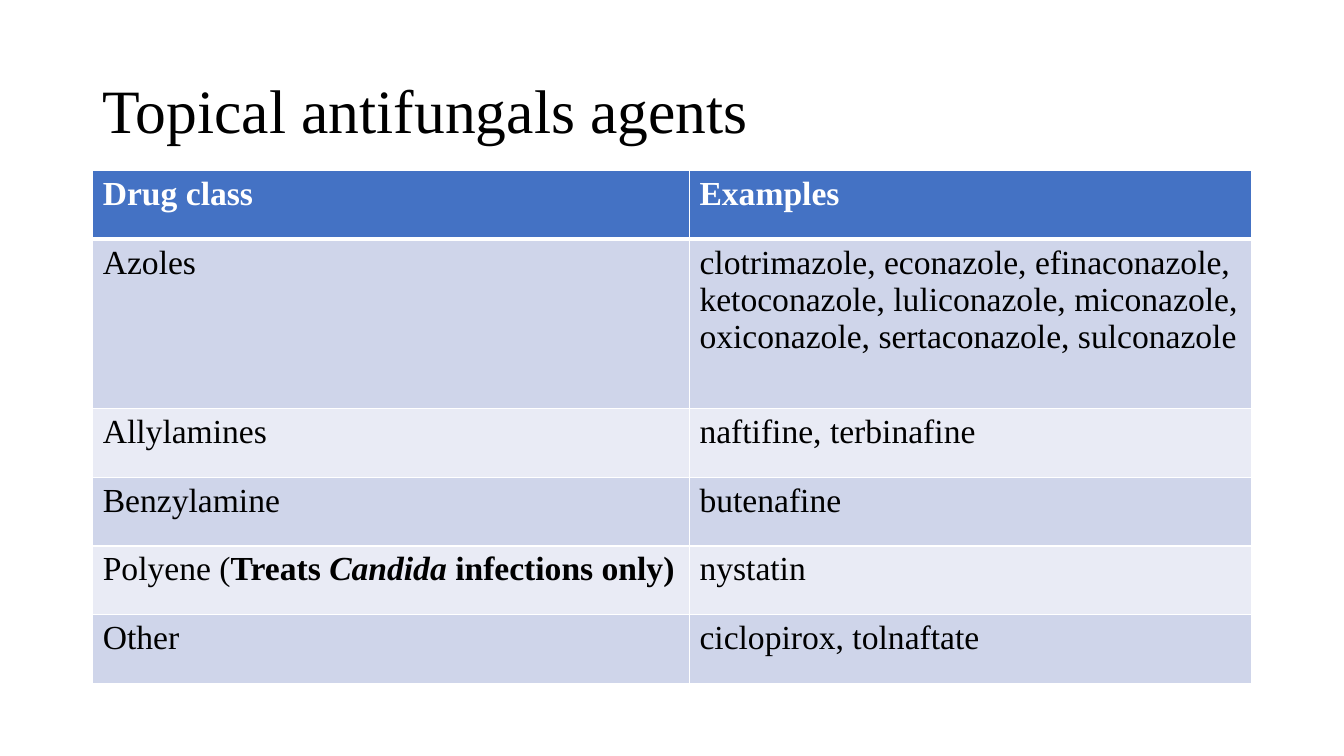
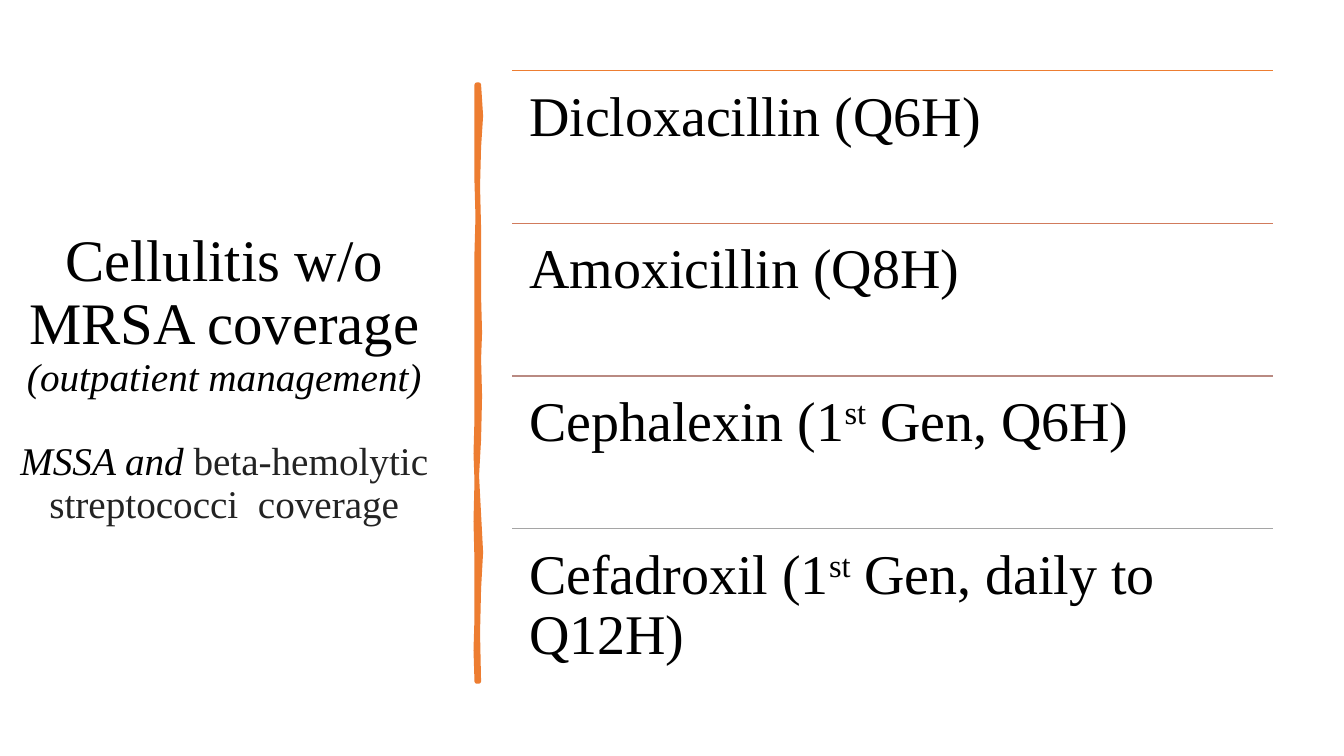
from pptx import Presentation, util as u
from pptx.dml.color import RGBColor
from pptx.enum import shapes, text
from pptx.oxml.ns import qn
from lxml import etree

FONT = "Times New Roman"
BLACK, WHITE, ORANGE = "000000", "FFFFFF", "ED7D31"
HEAD, DARK, LIGHT = "4472C4", "CFD5EA", "E9EBF5"
I = u.Inches


def color(code):
    return RGBColor.from_string(code)


def write(para, runs, size, spacing=0.9):
    """Add runs given as (words, style); style may hold b, i, sup and c."""
    para.line_spacing = spacing
    for words, style in runs:
        run = para.add_run()
        run.text = words
        font = run.font
        font.name, font.size = FONT, u.Pt(size)
        font.bold, font.italic = style.get("b", False), style.get("i", False)
        font.color.rgb = color(style.get("c", BLACK))
        if "sup" in style:
            run._r.get_or_add_rPr().set("baseline", "30000")


prs = Presentation()
prs.slide_width, prs.slide_height = I(40 / 3), I(7.5)
blank = prs.slide_layouts[6]

# Slide 1: table of drug classes
slide = prs.slides.add_slide(blank)
frame = slide.shapes.add_textbox(I(0.92), I(0.4), I(11.5), I(1.45)).text_frame
frame.word_wrap = True
frame.vertical_anchor = text.MSO_ANCHOR.MIDDLE
write(frame.paragraphs[0], [("Topical antifungals agents", {})], 44)

bold = {"b": True}
rows = [
    ([("Drug class", {"b": True, "c": WHITE})], [("Examples", {"b": True, "c": WHITE})]),
    ([("Azoles", {})],
     [("clotrimazole, econazole, efinaconazole, ketoconazole, luliconazole, "
       "miconazole, oxiconazole, sertaconazole, sulconazole", {})]),
    ([("Allylamines", {})], [("naftifine, terbinafine", {})]),
    ([("Benzylamine", {})], [("butenafine", {})]),
    ([("Polyene (", {}), ("Treats ", bold), ("Candida", {"b": True, "i": True}),
      (" infections only)", bold)], [("nystatin", {})]),
    ([("Other", {})], [("ciclopirox, tolnaftate", {})]),
]
full, tall = 5.09, 1.68
table = slide.shapes.add_table(len(rows), 2, I(0.92), I(1.69), I(11.5), I(full)).table
for col, wide in zip(table.columns, (5.92, 5.58)):
    col.width = I(wide)
for r, row in enumerate(rows):
    table.rows[r].height = I(tall if r == 1 else (full - tall) / (len(rows) - 1))
    for c, runs in enumerate(row):
        cell = table.cell(r, c)
        cell.fill.solid()
        cell.fill.fore_color.rgb = color(HEAD if r == 0 else DARK if r % 2 else LIGHT)
        write(cell.text_frame.paragraphs[0], runs, 24, 1.0)
        props = cell._tc.get_or_add_tcPr()
        for n, side in enumerate(("lnL", "lnR", "lnT", "lnB")):
            thick = (r, side) in ((0, "lnB"), (1, "lnT"))
            line = etree.Element(qn("a:" + side), w=str(u.Pt(3 if thick else 1)))
            fill = etree.SubElement(line, qn("a:solidFill"))
            etree.SubElement(fill, qn("a:srgbClr"), val=WHITE)
            props.insert(n, line)

# Slide 2: title, brush stroke and list of drugs
slide = prs.slides.add_slide(blank)
frame = slide.shapes.add_textbox(I(0.02), I(0.7), I(4.41), I(6.11)).text_frame
frame.word_wrap = True
frame.vertical_anchor = text.MSO_ANCHOR.MIDDLE
top, low = frame.paragraphs[0], frame.add_paragraph()
top.alignment = low.alignment = text.PP_ALIGN.CENTER
low.space_before = u.Pt(30)
write(top, [("Cellulitis w/o MRSA coverage ", {})], 42)
write(top, [("(outpatient management)", {"i": True})], 28)
write(low, [("MSSA and ", {"i": True}),
            ("beta-hemolytic streptococci  coverage", {"c": "232323"})], 28)

# Outline of the brush: down the right edge, then up the left one
brim = [
    (4.75, 0.84), (4.77, 1.15), (4.75, 1.46), (4.74, 1.85), (4.75, 2.26),
    (4.75, 2.94), (4.76, 3.3), (4.75, 3.56), (4.76, 3.93), (4.75, 4.36),
    (4.73, 4.72), (4.75, 5.1), (4.77, 5.48), (4.75, 5.84), (4.74, 6.28),
    (4.75, 6.76), (4.73, 6.76), (4.72, 6.45), (4.73, 6.13), (4.73, 5.57),
    (4.72, 5.17), (4.73, 4.77), (4.72, 4.5), (4.73, 4.15), (4.73, 3.35),
    (4.73, 2.5), (4.74, 2.15), (4.73, 1.81), (4.73, 1.33), (4.73, 0.84),
]
edge = [(I(x), I(y)) for x, y in brim]
draft = slide.shapes.build_freeform(*edge[0])
draft.add_line_segments(edge[1:], close=True)
brush = draft.convert_to_shape()
brush.shadow.inherit = False
brush.fill.solid()
brush.fill.fore_color.rgb = color(ORANGE)
brush.line.color.rgb = color(ORANGE)
brush.line.width = u.Pt(3.25)

sup = {"sup": True}
drugs = [
    (ORANGE, [("Dicloxacillin (Q6H)", {})]),
    ("D17B5C", [("Amoxicillin (Q8H)", {})]),
    ("B98A82", [("Cephalexin (1", {}), ("st", sup), (" Gen, Q6H)", {})]),
    ("A5A5A5", [("Cefadroxil (1", {}), ("st", sup), (" Gen, daily to Q12H)", {})]),
]
left, wide, high = 5.08, 7.55, 6.06 / len(drugs)
for n, (tint, runs) in enumerate(drugs):
    y = I(0.7 + n * high)
    rule = slide.shapes.add_connector(
        shapes.MSO_CONNECTOR.STRAIGHT, I(left), y, I(left + wide), y)
    rule.line.color.rgb = color(tint)
    rule.line.width = u.Pt(1)
    etree.SubElement(rule._element.spPr, qn("a:effectLst"))
    frame = slide.shapes.add_textbox(I(left), y, I(wide), I(high)).text_frame
    frame.word_wrap = True
    frame.margin_left = frame.margin_right = I(0.17)
    frame.margin_top = frame.margin_bottom = I(0.17)
    write(frame.paragraphs[0], runs, 40)

prs.save("out.pptx")
